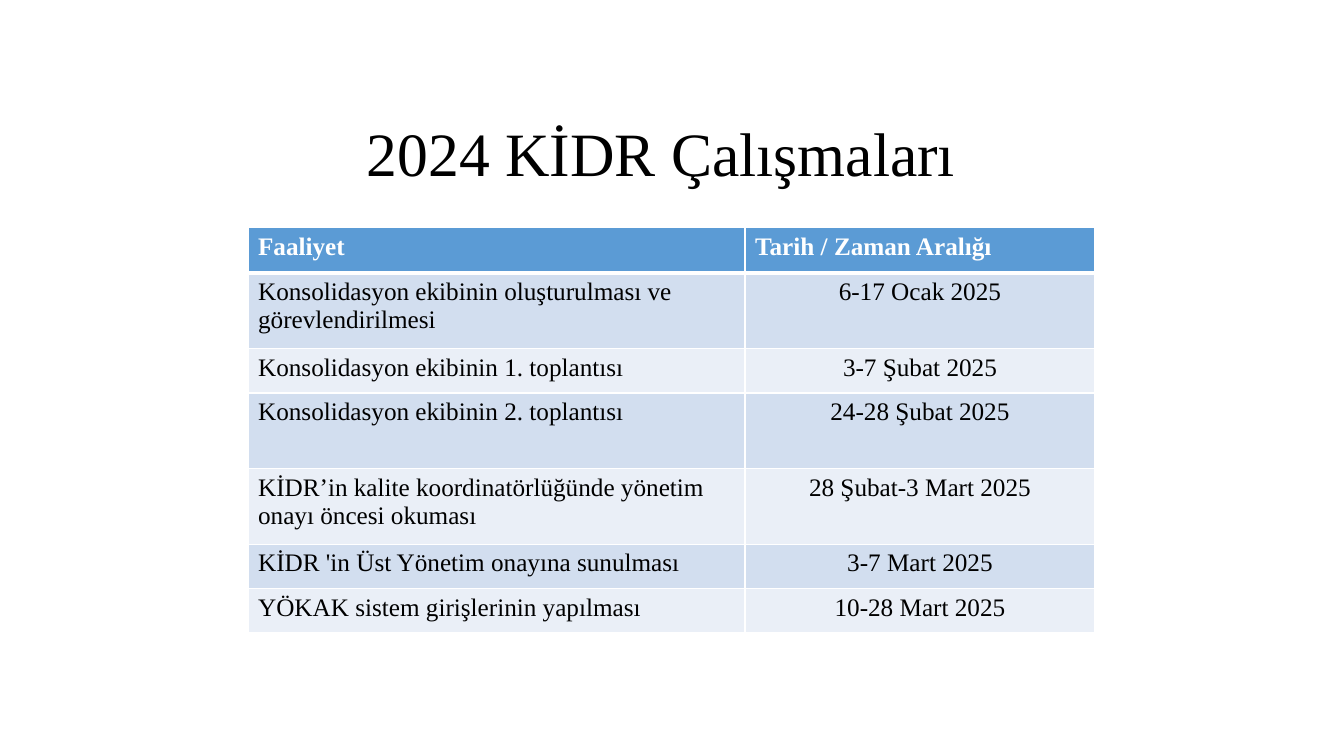
from lxml.etree import SubElement
from pptx import Presentation
from pptx.dml.color import RGBColor as RGB
from pptx.enum.text import MSO_ANCHOR as ANCHOR, PP_ALIGN as ALIGN
from pptx.oxml.ns import qn
from pptx.util import Inches, Pt

COLORS = {"text": "000000", "white": "FFFFFF", "header": "5B9BD5",
          "odd": "D2DEEF", "even": "EAEFF7"}
COLS = [4.93, 3.47]
SHORT, TALL = 0.44, 0.75
ROWS = [
    ("Faaliyet", "Tarih / Zaman Aralığı", 0.45),
    ("Konsolidasyon ekibinin oluşturulması ve görevlendirilmesi", "6-17 Ocak 2025", TALL),
    ("Konsolidasyon ekibinin 1. toplantısı", "3-7 Şubat 2025", SHORT),
    ("Konsolidasyon ekibinin 2. toplantısı", "24-28 Şubat 2025", TALL),
    ("KİDR’in kalite koordinatörlüğünde yönetim onayı öncesi okuması", "28 Şubat-3 Mart 2025", TALL),
    ("KİDR 'in Üst Yönetim onayına sunulması", "3-7 Mart 2025", SHORT),
    ("YÖKAK sistem girişlerinin yapılması", "10-28 Mart 2025", SHORT),
]


def write(tf, text, size=18, color="text", bold=False, align=ALIGN.LEFT, spacing=1.0):
    tf.word_wrap = True
    p = tf.paragraphs[0]
    p.alignment = align
    p.line_spacing = spacing
    r = p.add_run()
    r.text = text
    r.font.name = "Times New Roman"
    r.font.size = Pt(size)
    r.font.bold = bold
    r.font.color.rgb = RGB.from_string(COLORS[color])


def add_borders(cell, bottom):
    tc_pr = cell._tc.get_or_add_tcPr()
    widths = {"a:lnL": 1, "a:lnR": 1, "a:lnT": 1, "a:lnB": bottom}
    for i, (tag, width) in enumerate(widths.items()):
        ln = SubElement(tc_pr, qn(tag), w=str(Pt(width)))
        fill = SubElement(ln, qn("a:solidFill"))
        SubElement(fill, qn("a:srgbClr"), val=COLORS["white"])
        tc_pr.insert(i, ln)


prs = Presentation()
prs.slide_width, prs.slide_height = Inches(13.33), Inches(7.5)
s = prs.slides.add_slide(prs.slide_layouts[6])

title = s.shapes.add_textbox(Inches(3.54), Inches(1.01), Inches(6.26), Inches(1.08))
title.text_frame.vertical_anchor = ANCHOR.MIDDLE
write(title.text_frame, "2024 KİDR Çalışmaları", size=44, spacing=0.9)

height = sum(row[-1] for row in ROWS)
table = s.shapes.add_table(len(ROWS), len(COLS), Inches(2.46), Inches(2.26),
                           Inches(sum(COLS)), Inches(height)).table
for col, width in zip(table.columns, COLS):
    col.width = Inches(width)

for i, (*texts, row_height) in enumerate(ROWS):
    table.rows[i].height = Inches(row_height)
    header = i == 0
    fill = "header" if header else "odd" if i % 2 else "even"
    for j, text in enumerate(texts):
        cell = table.cell(i, j)
        cell.fill.solid()
        cell.fill.fore_color.rgb = RGB.from_string(COLORS[fill])
        add_borders(cell, bottom=3 if header else 1)
        write(cell.text_frame, text, bold=header,
              color="white" if header else "text",
              align=ALIGN.CENTER if j and not header else ALIGN.LEFT)

prs.save("out.pptx")
